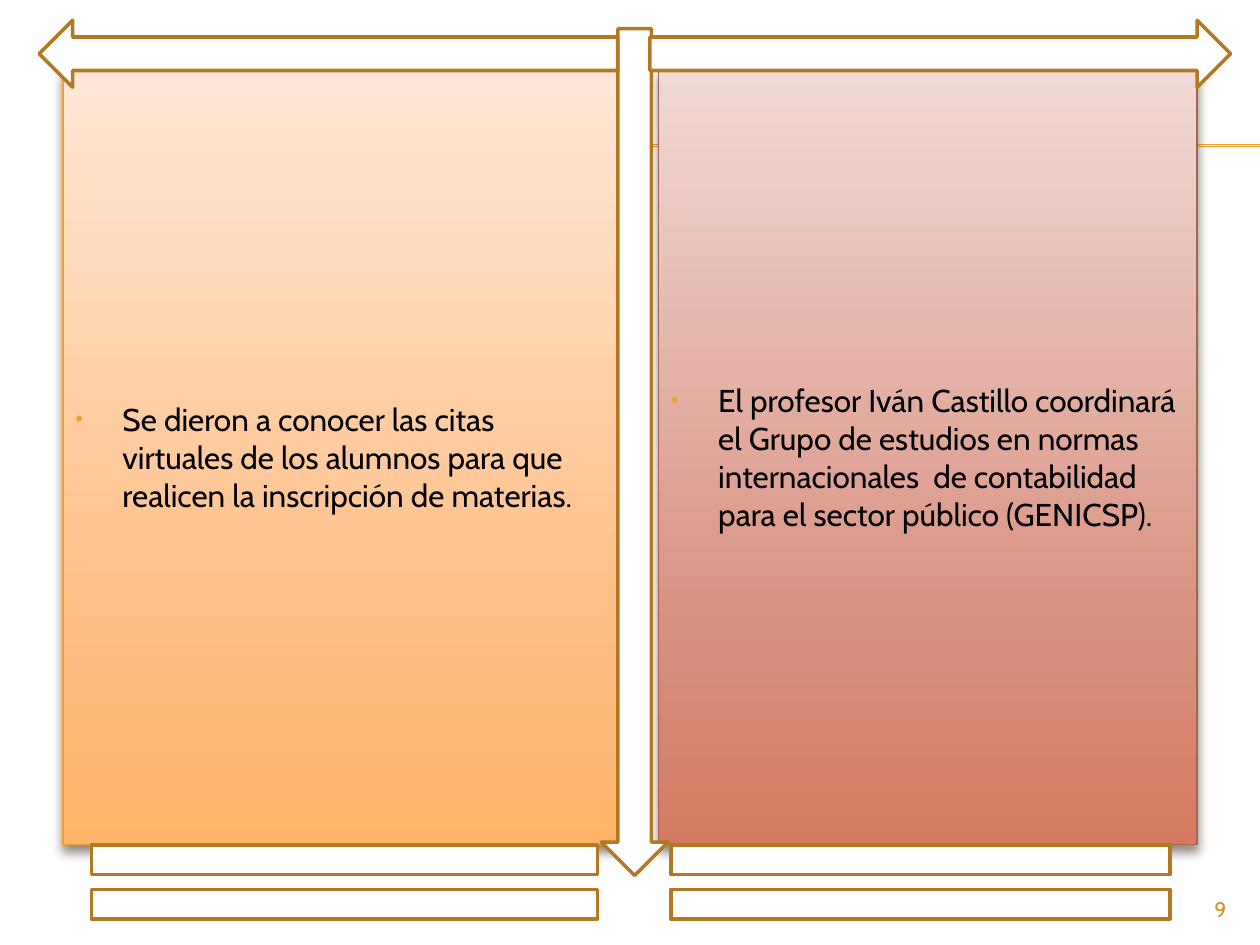
from lxml.etree import fromstring
from pptx import Presentation
from pptx.dml.color import RGBColor
from pptx.enum.shapes import MSO_CONNECTOR, MSO_SHAPE
from pptx.enum.text import MSO_ANCHOR, PP_ALIGN
from pptx.util import Cm, Pt

NS = 'xmlns:a="http://schemas.openxmlformats.org/drawingml/2006/main"'
FONT = "Cabin"
COLORS = {"gold": "F0A22E", "rust": "A5644E", "brown": "B27822", "white": "FFFFFF",
          "black": "000000", "number": "D48F29", "shadow": "4E3B30"}

# Content: text, left, width (cm), outline, gradient stops
PANELS = [
    ("Se dieron a conocer las citas virtuales de los alumnos para que realicen "
     "la inscripción de materias.",
     1.27, 11.23, "gold", [(0, "FFE7D7"), (72, "FFBE84"), (100, "FFB468")]),
    ("El profesor Iván Castillo coordinará el Grupo de estudios en normas "
     "internacionales  de contabilidad para el sector público (GENICSP).",
     13.28, 10.85, "rust", [(0, "F1D9D4"), (72, "D89180"), (100, "D47A62")]),
]
PANEL_TOP, PANEL_HEIGHT = 1.4, 15.62
NUMBER = "9"

# Frame: preset, left, top, width, height (cm)
FRAME = [
    (MSO_SHAPE.DOWN_ARROW, 12.12, 0.58, 1.35, 17.07),
    (MSO_SHAPE.RIGHT_ARROW, 13.1, 0.41, 11.71, 1.35),
    (MSO_SHAPE.LEFT_ARROW, 0.79, 0.41, 11.66, 1.35),
    (MSO_SHAPE.MATH_EQUAL, 0, 16.51, 13.89, 2.54),
    (MSO_SHAPE.MATH_EQUAL, 11.71, 16.51, 13.69, 2.54),
]
RULE_LEFT, RULE_TOPS = 1.42, (2.92, 2.95)


def rgb(name):
    return RGBColor.from_string(COLORS[name])


def xml(tag, body="", attrs=""):
    return fromstring(f"<a:{tag} {NS} {attrs}>{body}</a:{tag}>")


def add_outlined(s, preset, box, color, width):
    sp = s.shapes.add_shape(preset, *map(Cm, box))
    sp.shadow.inherit = False
    sp.line.color.rgb = rgb(color)
    sp.line.width = Pt(width)
    return sp


def add_text(p, text, size, color):
    r = p.add_run()
    r.text = text
    r.font.name = FONT
    r.font.size = Pt(size)
    r.font.color.rgb = rgb(color)


def set_gradient(sp, stops):
    sp.fill.gradient()
    sp.fill.gradient_angle = 270  # top to bottom
    gs_lst = sp.fill.gradient_stops[0]._gs.getparent()
    for gs in list(gs_lst):
        gs_lst.remove(gs)
    for pos, color in stops:
        gs_lst.append(xml("gs", f'<a:srgbClr val="{color}"/>', f'pos="{pos * 1000}"'))


def set_shadow(sp):
    effects = sp._element.spPr.find("{*}effectLst")
    effects.append(xml(
        "outerShdw",
        f'<a:srgbClr val="{COLORS["shadow"]}"><a:alpha val="60000"/></a:srgbClr>',
        f'blurRad="{Pt(6)}" dist="{Pt(4)}" dir="5400000" rotWithShape="0"'))


def set_bullet(p):
    pPr = p._p.get_or_add_pPr()
    pPr.set("marL", str(Cm(0.95)))
    pPr.set("indent", str(-Cm(0.95)))
    pPr.append(xml("spcBef", '<a:spcPct val="20000"/>'))
    pPr.append(xml("buClr", f'<a:srgbClr val="{COLORS["gold"]}"/>'))
    pPr.append(xml("buSzPct", attrs='val="70000"'))
    pPr.append(xml("buFont", attrs='typeface="Arial"'))
    pPr.append(xml("buChar", attrs='char="•"'))


prs = Presentation()
prs.slide_width, prs.slide_height = Cm(25.4), Cm(19.05)
s = prs.slides.add_slide(prs.slide_layouts[6])

# Double rule behind the panels
for top in RULE_TOPS:
    line = s.shapes.add_connector(MSO_CONNECTOR.STRAIGHT, Cm(RULE_LEFT), Cm(top),
                                  prs.slide_width, Cm(top))
    line.line.color.rgb = rgb("gold")
    line.line.width = Pt(0.75)
    line._element.spPr.append(xml("effectLst"))

# Text panels
for text, left, width, outline, stops in PANELS:
    sp = add_outlined(s, MSO_SHAPE.RECTANGLE, (left, PANEL_TOP, width, PANEL_HEIGHT),
                      outline, 0.79)
    set_gradient(sp, stops)
    set_shadow(sp)
    tf = sp.text_frame
    tf.word_wrap = True
    tf.vertical_anchor = MSO_ANCHOR.MIDDLE
    p = tf.paragraphs[0]
    p.alignment = PP_ALIGN.LEFT
    set_bullet(p)
    add_text(p, text, 18, "black")

# Arrows and double bars
for preset, *box in FRAME:
    sp = add_outlined(s, preset, box, "brown", 2)
    sp.fill.solid()
    sp.fill.fore_color.rgb = rgb("white")

# Slide number
tf = s.shapes.add_textbox(Cm(22.86), Cm(17.98), Cm(2.11), Cm(0.69)).text_frame
tf.word_wrap = True
tf.vertical_anchor = MSO_ANCHOR.MIDDLE
p = tf.paragraphs[0]
p.alignment = PP_ALIGN.RIGHT
add_text(p, NUMBER, 12, "number")

prs.save("out.pptx")
